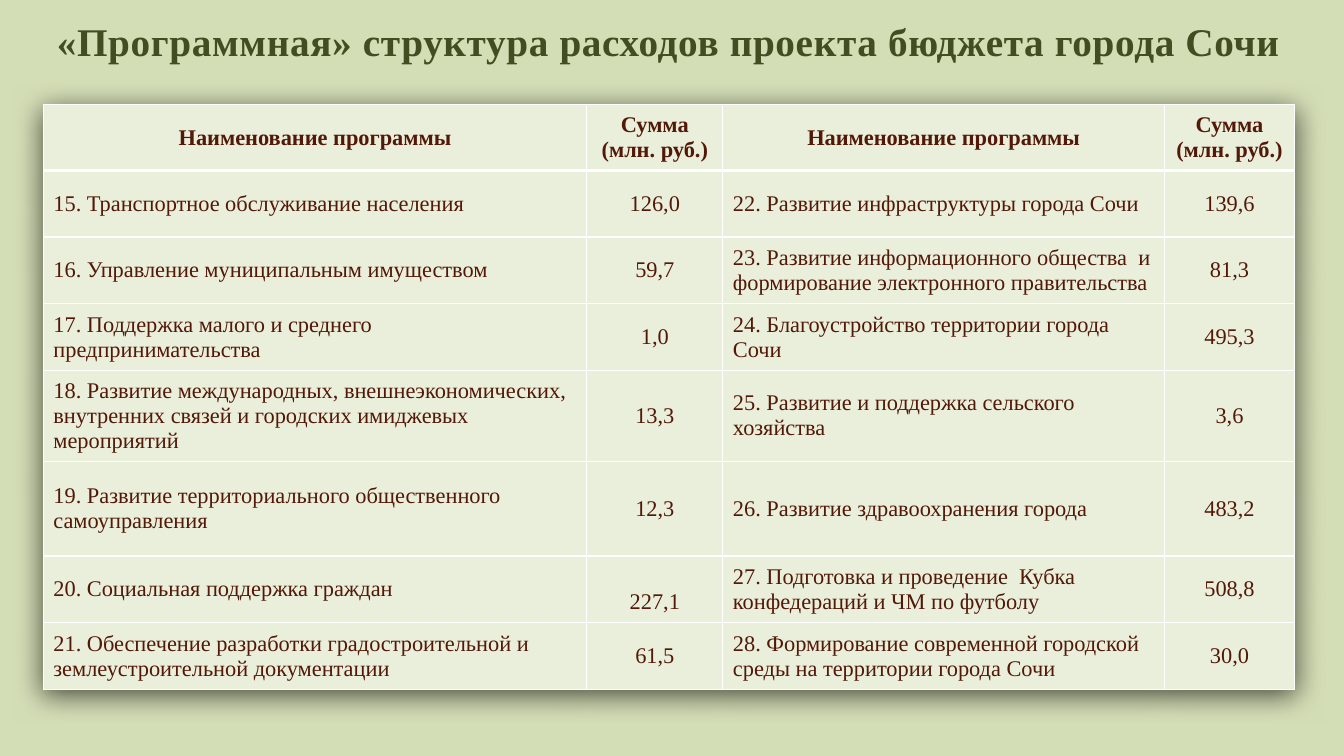
from lxml import etree
from pptx import Presentation
from pptx.dml.color import RGBColor
from pptx.enum.text import MSO_ANCHOR, PP_ALIGN
from pptx.oxml import parse_xml
from pptx.oxml.ns import nsdecls, qn
from pptx.util import Inches, Pt

FONT = "Times New Roman"
BACKGROUND, TITLE, TEXT, CELL, BORDER = "D4DEB6", "424D22", "521808", "EAEFDB", "FFFFFF"
COL_WIDTHS = [5.39, 1.35, 4.38, 1.29]
ROW_HEIGHTS = [0.65, 0.66, 0.66, 0.66, 0.9, 0.94, 0.66, 0.66]
LOWERED_SUM = "227,1"
ROWS = [
    ["Наименование программы", "Сумма (млн. руб.)"] * 2,
    ["15. Транспортное обслуживание населения", "126,0",
     "22. Развитие инфраструктуры города Сочи", "139,6"],
    ["16. Управление муниципальным имуществом", "59,7",
     "23. Развитие информационного общества  и формирование электронного правительства", "81,3"],
    ["17. Поддержка малого и среднего предпринимательства", "1,0",
     "24. Благоустройство территории города Сочи", "495,3"],
    ["18. Развитие международных, внешнеэкономических, внутренних связей "
     "и городских имиджевых мероприятий", "13,3",
     "25. Развитие и поддержка сельского хозяйства", "3,6"],
    ["19. Развитие территориального общественного самоуправления", "12,3",
     "26. Развитие здравоохранения города", "483,2"],
    ["20. Социальная поддержка граждан", LOWERED_SUM,
     "27. Подготовка и проведение  Кубка конфедераций и ЧМ по футболу", "508,8"],
    ["21. Обеспечение разработки градостроительной и землеустроительной документации", "61,5",
     "28. Формирование современной городской среды на территории города Сочи", "30,0"],
]


def rgb(color):
    return RGBColor.from_string(color)


def format_paragraph(p, size, color, bold, align):
    p.alignment = align
    for r in p.runs:
        r.font.name = FONT
        r.font.size = Pt(size)
        r.font.bold = bold
        r.font.color.rgb = rgb(color)


def set_borders(cell, top, bottom):
    tcPr = cell._tc.get_or_add_tcPr()
    for side, width in (("L", 1), ("R", 1), ("T", top), ("B", bottom)):
        ln = etree.SubElement(tcPr, qn(f"a:ln{side}"), w=str(Pt(width)))
        fill = etree.SubElement(ln, qn("a:solidFill"))
        etree.SubElement(fill, qn("a:srgbClr"), val=BORDER)


def add_table_shadow(table):
    effects = parse_xml(
        f'<a:effectLst {nsdecls("a")}>'
        f'<a:outerShdw blurRad="{Inches(0.28)}" dist="{Inches(0.05)}" dir="5400000" '
        'algn="ctr" rotWithShape="0"><a:srgbClr val="000000"><a:alpha val="65000"/>'
        '</a:srgbClr></a:outerShdw></a:effectLst>')
    table._tbl.tblPr.insert(0, effects)


def add_title(slide, left, top, width, height):
    sp = slide.shapes.add_textbox(Inches(left), Inches(top), Inches(width), Inches(height))
    tf = sp.text_frame
    tf.word_wrap = True
    tf.text = "«Программная» структура расходов проекта бюджета города Сочи"
    p = tf.paragraphs[0]
    format_paragraph(p, 28, TITLE, True, PP_ALIGN.CENTER)
    p.runs[0].font._element.set("spc", "50")


def add_program_table(slide, left, top, width, height):
    frame = slide.shapes.add_table(len(ROWS), len(COL_WIDTHS), Inches(left), Inches(top),
                                   Inches(width), Inches(height))
    table = frame.table
    table.horz_banding = False
    add_table_shadow(table)
    for column, col_width in zip(table.columns, COL_WIDTHS):
        column.width = Inches(width * col_width / sum(COL_WIDTHS))
    for i, (row, row_height) in enumerate(zip(table.rows, ROW_HEIGHTS)):
        row.height = Inches(height * row_height / sum(ROW_HEIGHTS))
        header = i == 0
        for j, (cell, text) in enumerate(zip(row.cells, ROWS[i])):
            set_borders(cell, 3 if i == 1 else 1, 3 if header else 1)
            cell.fill.solid()
            cell.fill.fore_color.rgb = rgb(CELL)
            cell.vertical_anchor = MSO_ANCHOR.MIDDLE
            if text == LOWERED_SUM:
                cell.margin_top = Inches(0.3)
            cell.text_frame.text = text
            align = PP_ALIGN.CENTER if header or j % 2 else PP_ALIGN.LEFT
            format_paragraph(cell.text_frame.paragraphs[0], 16, TEXT, header, align)


def main():
    prs = Presentation()
    prs.slide_width, prs.slide_height = Inches(13.33), Inches(7.5)
    slide = prs.slides.add_slide(prs.slide_layouts[6])
    slide.background.fill.solid()
    slide.background.fill.fore_color.rgb = rgb(BACKGROUND)
    add_title(slide, 0.43, 0.12, 12.41, 0.57)
    add_program_table(slide, 0.43, 1.04, 12.41, 5.8)
    prs.save("out.pptx")


if __name__ == "__main__":
    main()
